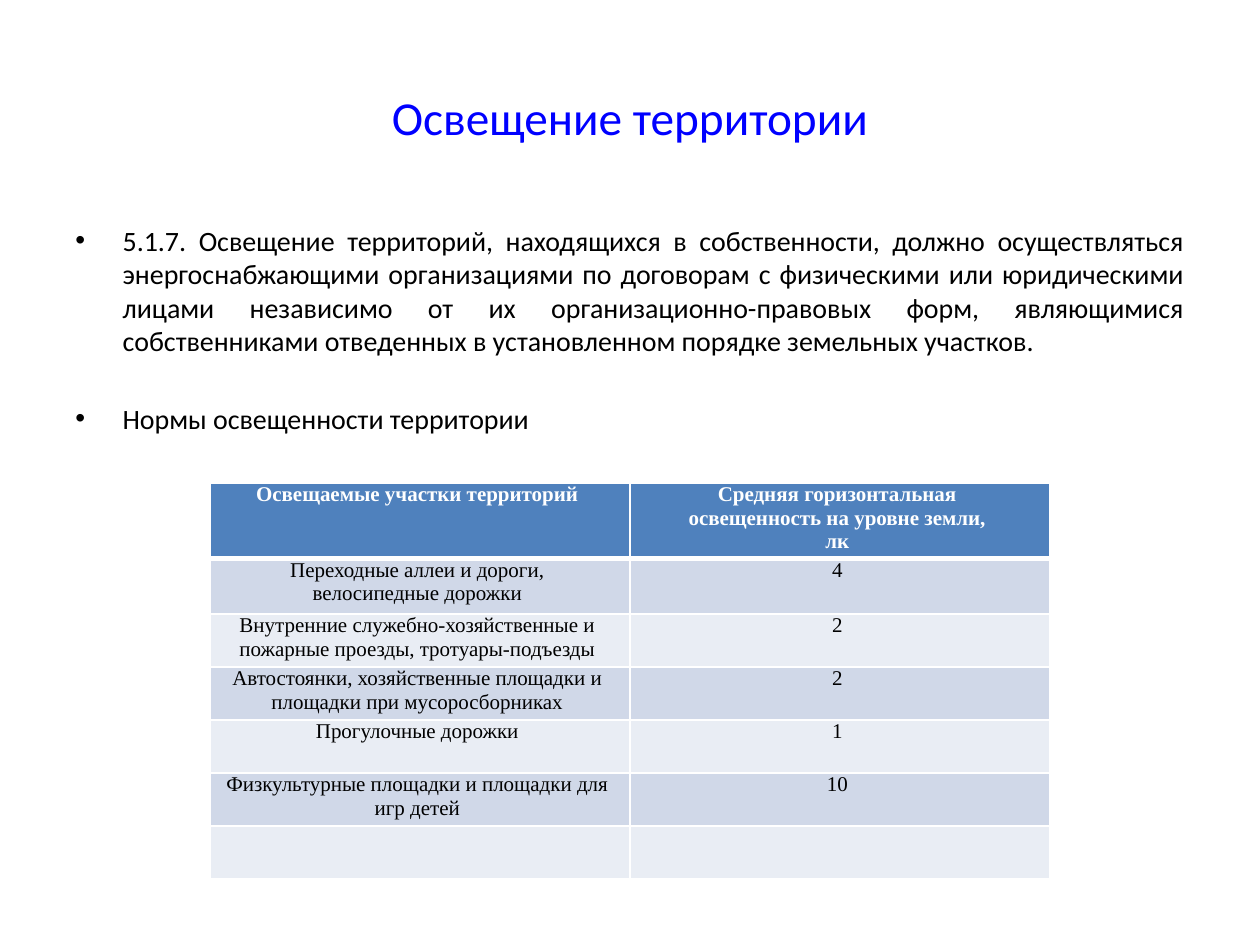
from typing import NamedTuple

from lxml.etree import SubElement
from pptx import Presentation
from pptx.dml.color import RGBColor
from pptx.enum.text import MSO_ANCHOR, PP_ALIGN
from pptx.oxml.ns import qn
from pptx.util import Pt


class Row(NamedTuple):
    area: str
    lux: str
    high: float = 30.3


ROWS = [
    Row("Освещаемые участки территорий ",
        "Средняя горизонтальная \nосвещенность на уровне земли, \nлк ", 39.6),
    Row("Переходные аллеи и дороги, \nвелосипедные дорожки ", "4 ", 31.7),
    Row("Внутренние служебно-хозяйственные и \n"
        "пожарные проезды, тротуары-подъезды ", "2 "),
    Row("Автостоянки, хозяйственные площадки и \n"
        "площадки при мусоросборниках ", "2 "),
    Row("Прогулочные дорожки ", "1 "),
    Row("Физкультурные площадки и площадки для \nигр детей ", "10 "),
    Row("", ""),
]
POINTS = [
    "5.1.7. Освещение территорий, находящихся в собственности, должно "
    "осуществляться энергоснабжающими организациями по договорам с "
    "физическими или юридическими лицами независимо от их "
    "организационно-правовых форм, являющимися собственниками отведенных "
    "в установленном порядке земельных участков.",
    "Нормы освещенности территории",
]
HEAD, BANDS = "4F81BD", ("E9EDF4", "D0D8E8")


def rgb(code: str) -> RGBColor:
    return RGBColor.from_string(code)


def style(para, name: str, size: float, color: str, align, bold=False) -> None:
    para.alignment = align
    font = para.font
    font.name, font.size, font.bold = name, Pt(size), bold
    font.color.rgb = rgb(color)


def place(shape, left: float, top: float, width: float, height: float) -> None:
    shape.left, shape.top = Pt(left), Pt(top)
    shape.width, shape.height = Pt(width), Pt(height)


def add_title(slide) -> None:
    title = slide.shapes.title
    place(title, 36, 21.6, 648, 90)
    frame = title.text_frame
    frame.text = "Освещение территории"
    frame.vertical_anchor = MSO_ANCHOR.MIDDLE
    style(frame.paragraphs[0], "Calibri", 27, "0000FF", PP_ALIGN.CENTER)


def add_points(slide) -> None:
    frame = slide.shapes.add_textbox(
        Pt(36), Pt(124), Pt(648), Pt(358)).text_frame
    frame.word_wrap = True
    frame.text = "\n".join(POINTS)
    for i, para in enumerate(frame.paragraphs):
        props = para._p.get_or_add_pPr()
        props.set("marL", str(Pt(27)))
        props.set("indent", str(Pt(-27)))
        SubElement(props, qn("a:buFont"), typeface="Arial")
        SubElement(props, qn("a:buChar"), char="•")
        style(para, "Calibri", 16, "000000", PP_ALIGN.JUSTIFY)
        para.space_before = Pt(25 * i)


def set_edges(cell, top: float, bottom: float) -> None:
    """Give a cell white borders, before its fill is set."""
    props = cell._tc.get_or_add_tcPr()
    for side, width in (("L", 1), ("R", 1), ("T", top), ("B", bottom)):
        line = SubElement(props, qn(f"a:ln{side}"), w=str(Pt(width)))
        fill = SubElement(line, qn("a:solidFill"))
        SubElement(fill, qn("a:srgbClr"), val="FFFFFF")


def fill_cell(cell, text: str, row: int) -> None:
    head = row == 0
    set_edges(cell, 3 if row == 1 else 1, 3 if head else 1)
    cell.fill.solid()
    cell.fill.fore_color.rgb = rgb(HEAD if head else BANDS[row % 2])
    cell.margin_left = cell.margin_right = Pt(3.6)
    cell.margin_top = cell.margin_bottom = 0
    para = cell.text_frame.paragraphs[0]
    para.text = text
    style(para, "Times New Roman", 12, "FFFFFF" if head else "000000",
          PP_ALIGN.CENTER, head)


def add_norms(slide) -> None:
    high = sum(row.high for row in ROWS)
    table = slide.shapes.add_table(
        len(ROWS), 2, Pt(120), Pt(276), Pt(480), Pt(high)).table
    for i, row in enumerate(ROWS):
        table.rows[i].height = Pt(row.high)
        for j, text in enumerate((row.area, row.lux)):
            fill_cell(table.cell(i, j), text, i)


def main() -> None:
    deck = Presentation()
    deck.slide_width, deck.slide_height = Pt(720), Pt(540)
    slide = deck.slides.add_slide(deck.slide_layouts[5])
    add_title(slide)
    add_points(slide)
    add_norms(slide)
    deck.save("out.pptx")


if __name__ == "__main__":
    main()
